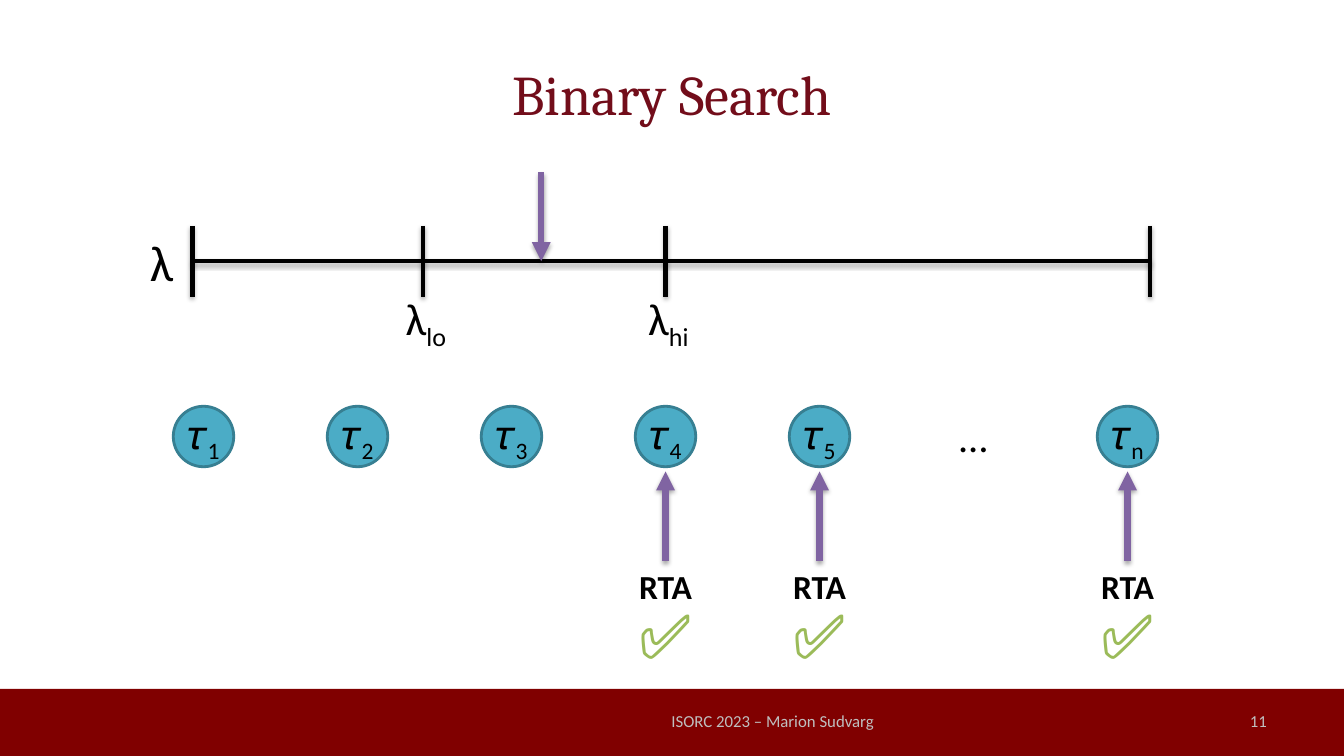
from lxml.etree import SubElement
from pptx import Presentation
from pptx.dml.color import RGBColor
from pptx.enum.shapes import MSO_CONNECTOR, MSO_SHAPE
from pptx.enum.text import MSO_ANCHOR, PP_ALIGN
from pptx.oxml import parse_xml
from pptx.oxml.ns import nsdecls, qn
from pptx.util import Pt

BLACK, PURPLE, GREEN, GREY = "000000", "8064A2", "9BBB59", "BFBFBF"
SHADOW = (
    f'<a:effectLst {nsdecls("a")}>'
    '<a:outerShdw blurRad="40000" dist="23000" dir="5400000" rotWithShape="0">'
    '<a:srgbClr val="000000"><a:alpha val="35000"/></a:srgbClr>'
    '</a:outerShdw></a:effectLst>'
)


def write(shape, text, size, color=BLACK, font="Calibri", align=PP_ALIGN.CENTER,
          subscript="", bold=False, anchor=MSO_ANCHOR.TOP, wrap=True):
    frame = shape.text_frame
    frame.word_wrap = wrap
    frame.vertical_anchor = anchor
    paragraph = frame.paragraphs[0]
    paragraph.add_run().text = text
    if subscript:
        index = paragraph.add_run()
        index.text = subscript
        index._r.get_or_add_rPr().set("baseline", "-25000")
    paragraph.alignment = align
    paragraph.font.size = Pt(size)
    paragraph.font.name = font
    paragraph.font.bold = bold
    paragraph.font.color.rgb = RGBColor.from_string(color)
    return shape


def draw_line(x1, y1, x2, y2, color=BLACK, width=3, arrow=False):
    line = slide.shapes.add_connector(
        MSO_CONNECTOR.STRAIGHT, Pt(x1), Pt(y1), Pt(x2), Pt(y2))
    line.line.color.rgb = RGBColor.from_string(color)
    line.line.width = Pt(width)
    if arrow:
        SubElement(line.line._get_or_add_ln(), qn("a:tailEnd"), type="triangle")
    line._element.spPr.append(parse_xml(SHADOW))
    return line


deck = Presentation()
deck.slide_width, deck.slide_height = Pt(960), Pt(540)
slide = deck.slides.add_slide(deck.slide_layouts[5])
shapes = slide.shapes

title = shapes.title
title.left, title.top, title.width, title.height = Pt(48), Pt(21.6), Pt(864), Pt(90)
write(title, "Binary Search", 40, "720D1A", "Cambria", anchor=MSO_ANCHOR.MIDDLE)

footer_bar = shapes.add_shape(MSO_SHAPE.RECTANGLE, 0, Pt(492), Pt(960), Pt(48))
footer_bar.shadow.inherit = False
footer_bar.fill.solid()
footer_bar.fill.fore_color.rgb = RGBColor.from_string("800000")
footer_bar.line.fill.background()

for text, left, width, align in (
    ("ISORC 2023 – Marion Sudvarg", 400, 304, PP_ALIGN.CENTER),
    ("11", 688, 224, PP_ALIGN.RIGHT),
):
    footer = shapes.add_textbox(Pt(left), Pt(500.5), Pt(width), Pt(28.8))
    write(footer, text, 12, GREY, align=align, anchor=MSO_ANCHOR.MIDDLE)

axis_start, axis_end, axis_y = 137.5, 821.5, 186.5
lambda_lo, lambda_hi = 302.3, 475.4
draw_line(axis_start, axis_y, axis_end, axis_y)
for tick_x in (axis_start, lambda_lo, lambda_hi, axis_end):
    draw_line(tick_x, 161.3, tick_x, 212)
draw_line(386.6, 123, 386.6, axis_y, PURPLE, 4.5, arrow=True)

axis_name = shapes.add_textbox(Pt(100), Pt(161.3), Pt(23.8), Pt(51))
write(axis_name, "λ", 36, align=PP_ALIGN.LEFT)
for bound, center in (("lo", 304.2), ("hi", 477.4)):
    bound_label = shapes.add_textbox(Pt(center - 30), Pt(203.8), Pt(60), Pt(46))
    write(bound_label, "λ", 32, subscript=bound)

first_center, task_step, task_size = 145.4, 110, 43.2
for position, task in enumerate(("1", "2", "3", "4", "5", "", "n")):
    center = first_center + position * task_step
    circle = shapes.add_shape(MSO_SHAPE.OVAL, Pt(center - task_size / 2), Pt(290.2),
                              Pt(task_size), Pt(task_size))
    circle.shadow.inherit = False
    frame = circle.text_frame
    frame.margin_left = frame.margin_right = frame.margin_top = frame.margin_bottom = 0
    write(circle, "𝜏" if task else "…", 29, subscript=task, anchor=MSO_ANCHOR.MIDDLE)
    if task:
        circle.fill.solid()
        circle.fill.fore_color.rgb = RGBColor.from_string("4BACC6")
        circle.line.color.rgb = RGBColor.from_string("377F92")
        circle.line.width = Pt(2)
    else:
        circle.fill.background()
        circle.line.fill.background()

    if task in ("4", "5", "n"):
        analysis = shapes.add_textbox(Pt(center - 26.3), Pt(400.8), Pt(52.6), Pt(36))
        write(analysis, "RTA", 24, bold=True, wrap=False)
        arrow = draw_line(center, 400.8, center, 336.8, PURPLE, 4.5, arrow=True)
        arrow.begin_connect(analysis, 0)
        verdict = shapes.add_textbox(Pt(center - 29.5), Pt(423), Pt(59), Pt(60.5))
        write(verdict, "✅", 44, GREEN, "Karla", bold=True, wrap=False)

deck.save("out.pptx")
